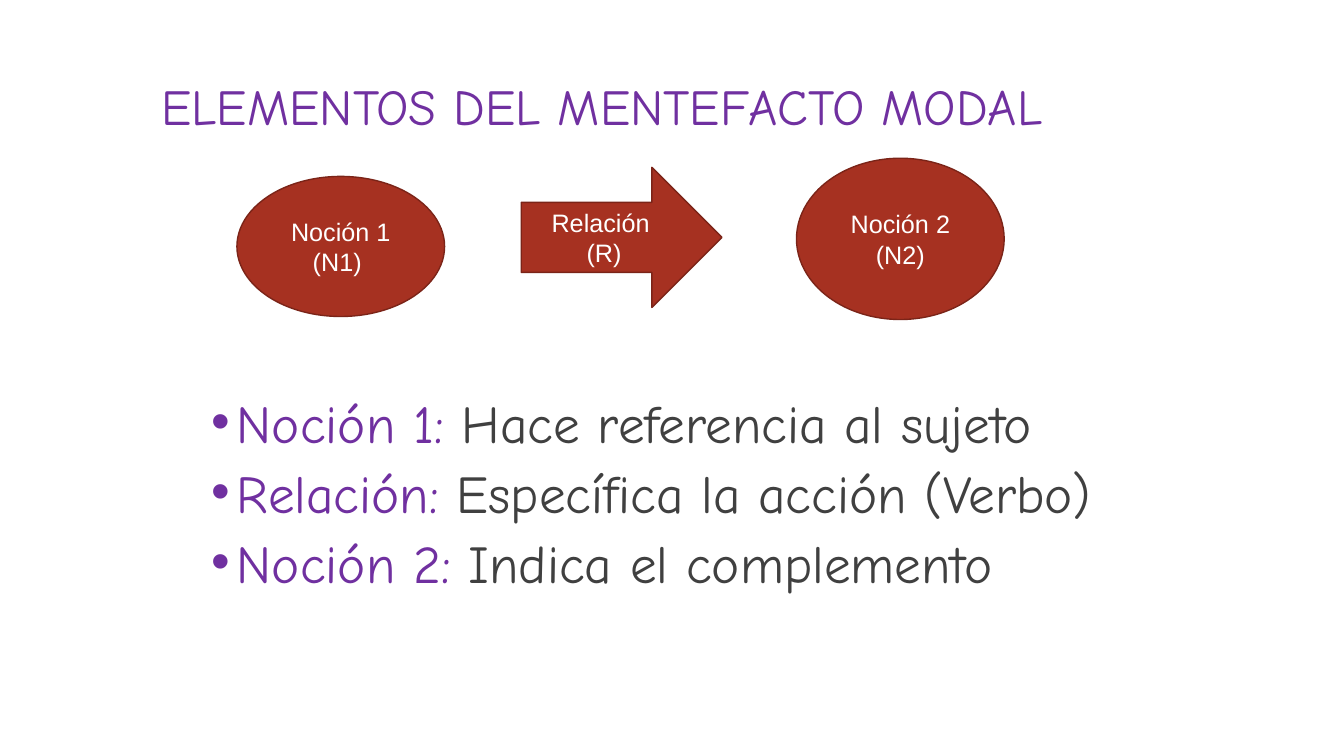
import pptx
import pptx.util
import pptx.dml.color
import pptx.enum.shapes
import pptx.enum.text
import pptx.oxml.ns
import lxml.etree

Inches = pptx.util.Inches
Pt = pptx.util.Pt
PresetShape = pptx.enum.shapes.MSO_SHAPE
Anchor = pptx.enum.text.MSO_ANCHOR
Align = pptx.enum.text.PP_ALIGN

COLOURS = {
    "purple": "7030A0",
    "grey": "404040",
    "brick": "A63121",
    "brick_edge": "7B2418",
    "white": "FFFFFF",
}


class ModalSlide:
    """Holds the slide together with its fonts and colours."""

    hand_font = "Comic Neue"
    shape_font = "Arial"

    def __init__(self, slide):
        self.slide = slide

    def colour(self, name):
        return pptx.dml.color.RGBColor.from_string(COLOURS[name])

    def add_run(self, paragraph, wording, font, size, colour):
        run = paragraph.add_run()
        run.text = wording
        run.font.name = font
        run.font.size = Pt(size)
        run.font.color.rgb = self.colour(colour)

    def place(self, placeholder, left, top, width, height, anchor):
        """Move a placeholder and return its text frame."""
        placeholder.left, placeholder.top = Inches(left), Inches(top)
        placeholder.width, placeholder.height = Inches(width), Inches(height)
        frame = placeholder.text_frame
        frame.word_wrap = True
        frame.auto_size = pptx.enum.text.MSO_AUTO_SIZE.NONE
        frame.vertical_anchor = anchor
        return frame

    def title(self, wording, *box):
        frame = self.place(self.slide.shapes.title, *box, Anchor.BOTTOM)
        heading = frame.paragraphs[0]
        heading.alignment = Align.LEFT
        heading.line_spacing = 0.9
        self.add_run(heading, wording, self.hand_font, 36, "purple")

    def add_bullet(self, paragraph):
        properties = paragraph._p.get_or_add_pPr()
        properties.set("marL", str(Inches(0.25)))
        properties.set("indent", str(Inches(-0.25)))
        qn = pptx.oxml.ns.qn
        lxml.etree.SubElement(properties, qn("a:buFont"), typeface="Arial")
        lxml.etree.SubElement(properties, qn("a:buChar"), char="•")

    def definitions(self, entries, *box):
        frame = self.place(self.slide.placeholders[1], *box, Anchor.TOP)
        for index, (term, meaning) in enumerate(entries):
            entry = frame.add_paragraph() if index else frame.paragraphs[0]
            self.add_bullet(entry)
            entry.alignment = Align.LEFT
            entry.line_spacing = 0.7
            entry.space_before = Pt(18 if index else 0)
            self.add_run(entry, term, self.hand_font, 38, "purple")
            self.add_run(entry, meaning, self.hand_font, 38, "grey")

    def diagram_part(self, preset, lines, *box):
        part = self.slide.shapes.add_shape(preset, *map(Inches, box))
        part.shadow.inherit = False
        part.fill.solid()
        part.fill.fore_color.rgb = self.colour("brick")
        part.line.color.rgb = self.colour("brick_edge")
        part.line.width = Pt(1)
        frame = part.text_frame
        frame.word_wrap = True
        frame.vertical_anchor = Anchor.MIDDLE
        for index, wording in enumerate(lines):
            label = frame.add_paragraph() if index else frame.paragraphs[0]
            label.alignment = Align.CENTER
            self.add_run(label, wording, self.shape_font, 18, "white")


def main():
    deck = pptx.Presentation()
    deck.slide_width, deck.slide_height = Inches(13.33), Inches(7.5)
    modal = ModalSlide(deck.slides.add_slide(deck.slide_layouts[1]))

    modal.title("ELEMENTOS DEL MENTEFACTO MODAL", 1.5, -0.25, 10.72, 1.65)
    modal.definitions(
        [
            ("Noción 1: ", "Hace referencia al sujeto"),
            ("Relación: ", "Específica la acción (Verbo)"),
            ("Noción 2: ", "Indica el complemento"),
        ],
        2, 4, 9.48, 2.91,
    )
    modal.diagram_part(PresetShape.OVAL, ["Noción 1", "(N1) "], 2.35, 1.75, 2.06, 1.39)
    modal.diagram_part(PresetShape.RIGHT_ARROW, ["Relación ", "(R)"], 5.17, 1.66, 1.99, 1.39)
    modal.diagram_part(PresetShape.OVAL, ["Noción 2", "(N2)"], 7.9, 1.57, 2.06, 1.6)

    deck.save("out.pptx")


if __name__ == "__main__":
    main()
